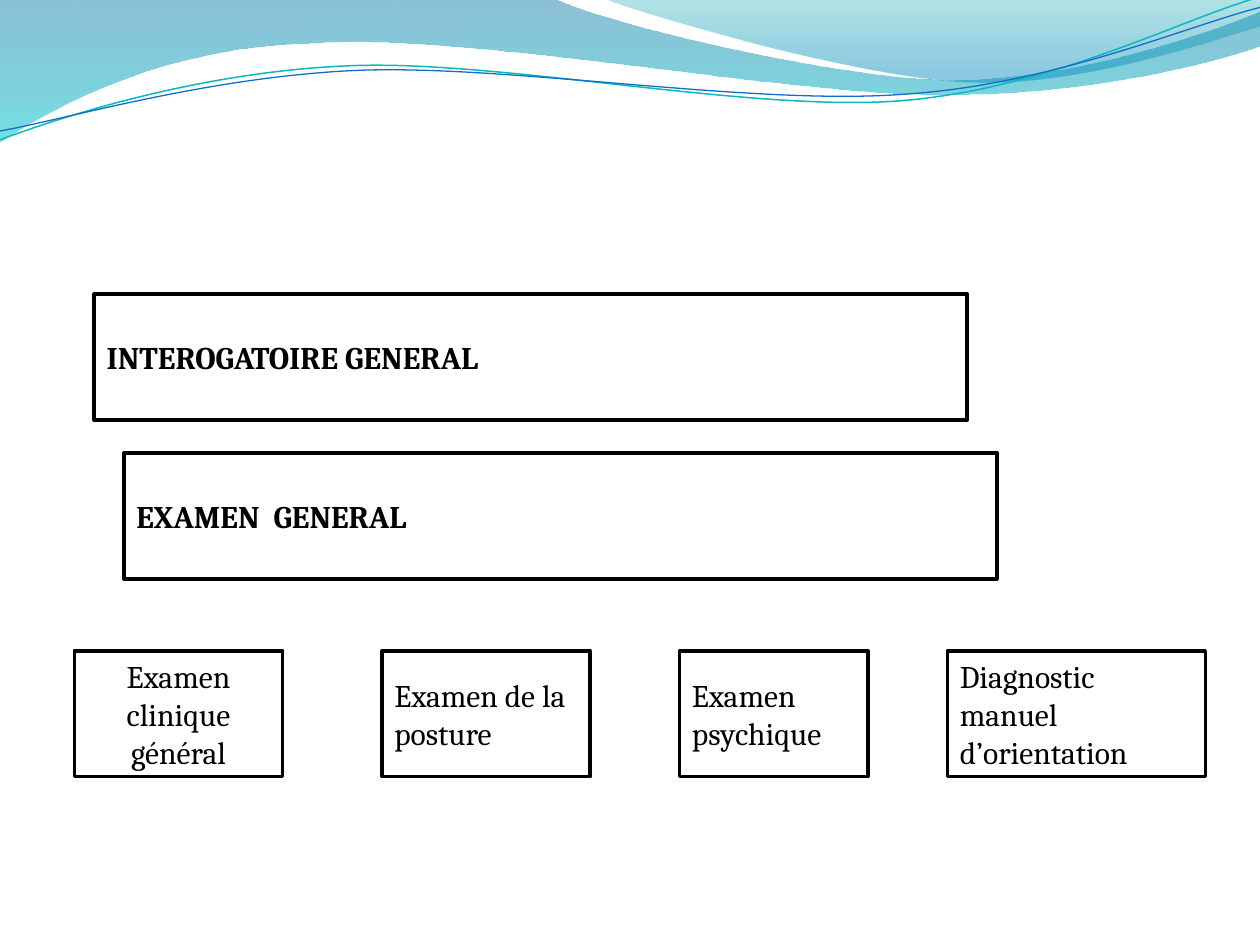
from dataclasses import dataclass
from typing import Optional

import lxml.etree
import pptx
import pptx.dml.color
import pptx.enum.shapes
import pptx.enum.text
import pptx.oxml.ns
import pptx.shapes.autoshape
import pptx.shapes.shapetree
import pptx.slide
import pptx.util

Cm = pptx.util.Cm
Pt = pptx.util.Pt
RGBColor = pptx.dml.color.RGBColor
PP_ALIGN = pptx.enum.text.PP_ALIGN
qn = pptx.oxml.ns.qn

WHITE = RGBColor(0xFF, 0xFF, 0xFF)
BLACK = RGBColor(0, 0, 0)
STEEL = RGBColor(0x00, 0x74, 0xA1)
CYAN = RGBColor(0x00, 0xC6, 0xCF)
TEAL = RGBColor(0x00, 0xA1, 0xA9)
AZURE = RGBColor(0x00, 0x8B, 0xBF)
TURQUOISE = RGBColor(0x0A, 0xB8, 0xBF)
BLUE = RGBColor(0x0F, 0x6F, 0xC6)

FONT = "Cambria"
BOX_H = 2.54
BANNER_W = 17.6
EXAM_TOP = 13.12
LINE_TILT = 357.3

Point = tuple[float, float]
Segment = tuple[Point, ...]


@dataclass
class Stop:
    position: float
    color: RGBColor
    opacity: int


@dataclass
class Wave:
    start: Point
    segments: list[Segment]
    stops: tuple[Stop, ...] = ()
    line: Optional[RGBColor] = None
    width: float = 0


@dataclass
class Box:
    text: str
    left: float
    top: float
    width: float
    bold: bool = False
    align: PP_ALIGN = PP_ALIGN.LEFT


FILLED_WAVES = [
    Wave((0, 0), [
        ((11.18, -0.03),),
        ((12.09, 0.43), (16.87, 1.6), (19.25, 1.6)),
        ((21.67, 1.6), (24.33, 0.66), (25.4, 0.23)),
        ((25.43, 0.91),),
        ((24.97, 1.12), (22.1, 1.93), (18.95, 1.91)),
        ((15.8, 1.91), (9.7, 0.71), (6.53, 0.86)),
        ((3.28, 0.91), (1.17, 2.11), (-0.03, 2.87)),
    ], stops=(Stop(0, STEEL, 45), Stop(1, CYAN, 55))),
    Wave((12.17, -0.03), [
        ((12.93, 0.28), (17.32, 1.57), (19.53, 1.65)),
        ((21.74, 1.75), (24.41, 0.81), (25.4, 0.53)),
        ((25.4, 0),),
    ], stops=(Stop(0, TEAL, 30), Stop(0.8, AZURE, 45))),
]

LINE_WAVES = [
    Wave((-0.05, 2.22), [
        ((1.19, 1.82), (4.02, 1.04), (7.05, 1.06)),
        ((10.05, 1.07), (15.02, 2.37), (18.08, 2.29)),
        ((21.13, 2.2), (23.86, 0.91), (25.41, 0.55)),
    ], line=TURQUOISE, width=0.85),
    Wave((-0.04, 2.04), [
        ((1.16, 1.9), (4.17, 1.15), (7.2, 1.16)),
        ((10.25, 1.18), (15.13, 2.25), (18.19, 2.16)),
        ((21.21, 2.11), (23.93, 1.06), (25.45, 0.75)),
    ], line=BLUE, width=0.75),
]

BOXES = [
    Box("INTEROGATOIRE GENERAL", 1.9, 5.93, BANNER_W, bold=True),
    Box("EXAMEN  GENERAL", 2.5, 9.13, BANNER_W, bold=True),
    Box("Examen de la posture", 7.7, EXAM_TOP, 4.2),
    Box("Examen psychique", 13.7, EXAM_TOP, 3.8),
    Box("Diagnostic manuel d’orientation", 19.1, EXAM_TOP, 5.2),
    Box("Examen clinique général", 1.5, EXAM_TOP, 4.2, align=PP_ALIGN.CENTER),
]


def bend(sp: pptx.shapes.autoshape.Shape, segments: list[Segment]) -> None:
    corners = iter(list(sp.element.iter(qn("a:lnTo"))))
    for seg in segments:
        steps = [next(corners) for _ in seg]
        if len(steps) == 3:
            curve = lxml.etree.Element(qn("a:cubicBezTo"))
            steps[0].addprevious(curve)
            for step in steps:
                curve.append(step[0])
                step.getparent().remove(step)


def fill_gradient(sp: pptx.shapes.autoshape.Shape, stops: tuple[Stop, ...]) -> None:
    sp.fill.gradient()
    sp.fill.gradient_angle = 270
    for target, stop in zip(sp.fill.gradient_stops, stops):
        target.position = stop.position
        target.color.rgb = stop.color
    colors = sp.element.spPr.find(qn("a:gradFill")).iter(qn("a:srgbClr"))
    for color, stop in zip(list(colors), stops):
        lxml.etree.SubElement(color, qn("a:alpha"), val=str(stop.opacity * 1000))


def draw_wave(shapes: pptx.shapes.shapetree.GroupShapes, wave: Wave) -> None:
    points = [(Cm(x), Cm(y)) for seg in wave.segments for x, y in seg]
    fb = shapes.build_freeform(Cm(wave.start[0]), Cm(wave.start[1]))
    fb.add_line_segments(points, close=bool(wave.stops))
    sp = fb.convert_to_shape()
    bend(sp, wave.segments)
    sp.shadow.inherit = False
    if wave.stops:
        fill_gradient(sp, wave.stops)
        sp.line.fill.background()
    else:
        sp.rotation = LINE_TILT
        sp.fill.background()
        sp.line.color.rgb = wave.line
        sp.line.width = Pt(wave.width)


def draw_box(s: pptx.slide.Slide, box: Box) -> None:
    sp = s.shapes.add_shape(pptx.enum.shapes.MSO_SHAPE.RECTANGLE,
                            Cm(box.left), Cm(box.top), Cm(box.width), Cm(BOX_H))
    sp.shadow.inherit = False
    sp.fill.solid()
    sp.fill.fore_color.rgb = WHITE
    sp.line.color.rgb = BLACK
    sp.line.width = Pt(2)
    tf = sp.text_frame
    tf.word_wrap = True
    tf.vertical_anchor = pptx.enum.text.MSO_ANCHOR.MIDDLE
    p = tf.paragraphs[0]
    p.alignment = box.align
    r = p.add_run()
    r.text = box.text
    r.font.name = FONT
    r.font.size = Pt(18)
    r.font.bold = box.bold
    r.font.color.rgb = BLACK


def main() -> None:
    prs = pptx.Presentation()
    prs.slide_width, prs.slide_height = Cm(25.4), Cm(19.05)
    s = prs.slides.add_slide(prs.slide_layouts[6])
    for wave in FILLED_WAVES:
        draw_wave(s.shapes, wave)
    grp = s.shapes.add_group_shape()
    for wave in LINE_WAVES:
        draw_wave(grp.shapes, wave)
    for box in BOXES:
        draw_box(s, box)
    prs.save("out.pptx")


if __name__ == "__main__":
    main()
